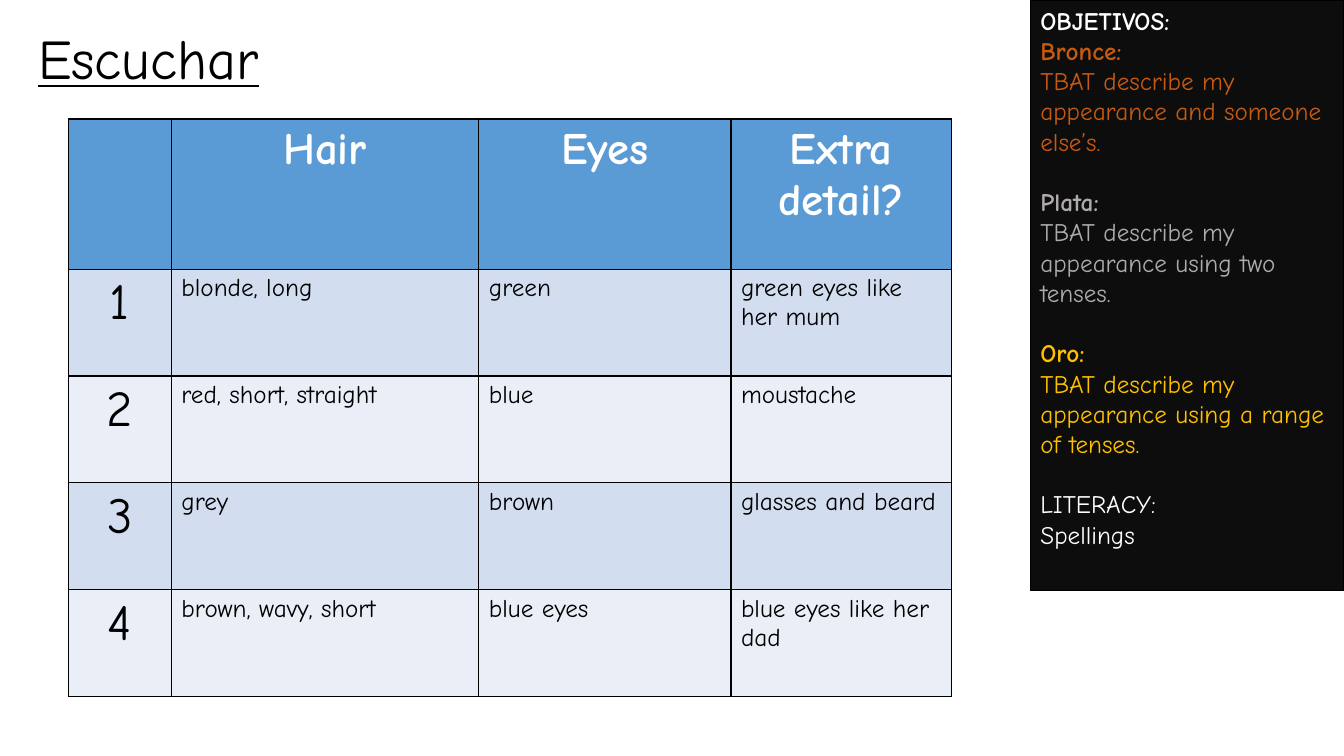
"""Build the Escuchar listening slide with its answer table and objectives panel."""
import pptx
import pptx.dml.color
import pptx.enum.shapes
import pptx.enum.text
import pptx.oxml
import pptx.oxml.ns
import pptx.util
from pptx.util import Inches

RGBColor = pptx.dml.color.RGBColor
BLACK = RGBColor(0x00, 0x00, 0x00)
WHITE = RGBColor(0xFF, 0xFF, 0xFF)
PANEL = RGBColor(0x0D, 0x0D, 0x0D)
BRONZE = RGBColor(0xC5, 0x5A, 0x11)
SILVER = RGBColor(0xAF, 0xAB, 0xAB)
GOLD = RGBColor(0xFF, 0xC0, 0x00)
HEADER = RGBColor(0x5B, 0x9B, 0xD5)
BANDS = [RGBColor(0xEA, 0xEF, 0xF7), RGBColor(0xD2, 0xDE, 0xEF)]
LEFT = pptx.enum.text.PP_ALIGN.LEFT
CENTER = pptx.enum.text.PP_ALIGN.CENTER


def write(paragraph, text, size, color, bold=False, alignment=LEFT):
    paragraph.text = text
    paragraph.alignment = alignment
    paragraph.font.name = "Comic Neue"
    paragraph.font.size = pptx.util.Pt(size)
    paragraph.font.bold = bold
    paragraph.font.color.rgb = color


def add_borders(cell):
    properties = cell._tc.get_or_add_tcPr()
    for position, side in enumerate(("lnL", "lnR", "lnT", "lnB")):
        properties.insert(position, pptx.oxml.parse_xml(
            f'<a:{side} {pptx.oxml.ns.nsdecls("a")} w="12700"><a:solidFill>'
            f'<a:srgbClr val="{BLACK}"/></a:solidFill></a:{side}>'))


presentation = pptx.Presentation()
presentation.slide_width = Inches(13.33)
presentation.slide_height = Inches(7.5)
slide = presentation.slides.add_slide(presentation.slide_layouts[6])

title = slide.shapes.add_textbox(Inches(0.28), Inches(0.18), Inches(2.83), Inches(0.77))
title.text_frame.word_wrap = True
write(title.text_frame.paragraphs[0], "Escuchar", 40, BLACK)
title.text_frame.paragraphs[0].font.underline = True

panel = slide.shapes.add_shape(
    pptx.enum.shapes.MSO_SHAPE.RECTANGLE, Inches(10.22), 0, Inches(3.11), Inches(5.86))
panel.shadow.inherit = False
panel.fill.solid()
panel.fill.fore_color.rgb = PANEL
panel.line.color.rgb = BLACK
panel.line.width = pptx.util.Pt(1)
panel.text_frame.word_wrap = True
panel.text_frame.vertical_anchor = pptx.enum.text.MSO_ANCHOR.TOP

objectives = [
    ("OBJETIVOS:", WHITE, True, 0),
    ("Bronce:", BRONZE, True, 0),
    ("TBAT describe my appearance and someone else’s.", BRONZE, False, 0),
    ("Plata:", SILVER, True, 21.6),
    ("TBAT describe my appearance using two tenses.", SILVER, False, 0),
    ("Oro:", GOLD, True, 21.6),
    ("TBAT describe my appearance using a range of tenses.", GOLD, False, 0),
    ("LITERACY:", WHITE, False, 21.6),
    ("Spellings", WHITE, False, 0),
]
for index, (text, color, bold, gap) in enumerate(objectives):
    frame = panel.text_frame
    paragraph = frame.add_paragraph() if index else frame.paragraphs[0]
    write(paragraph, text, 18, color, bold)
    paragraph.space_before = pptx.util.Pt(gap)

answers = [
    ("", "Hair", "Eyes", "Extra detail?"),
    ("1", "blonde, long", "green", "green eyes like her mum"),
    ("2", "red, short, straight", "blue", "moustache"),
    ("3", "grey", "brown", "glasses and beard"),
    ("4", "brown, wavy, short", "blue eyes", "blue eyes like her dad"),
]
table = slide.shapes.add_table(
    5, 4, Inches(0.68), Inches(1.18), Inches(8.76), Inches(5.73)).table
for column, width in zip(table.columns, (1.02, 3.05, 2.5, 2.19)):
    column.width = Inches(width)
for row_index, values in enumerate(answers):
    table.rows[row_index].height = Inches(1.06 if row_index else 1.49)
    for column_index, value in enumerate(values):
        cell = table.cell(row_index, column_index)
        cell.fill.solid()
        cell.fill.fore_color.rgb = BANDS[row_index % 2] if row_index else HEADER
        add_borders(cell)
        paragraph = cell.text_frame.paragraphs[0]
        if row_index == 0:
            write(paragraph, value, 32, WHITE, True, CENTER)
        elif column_index == 0:
            write(paragraph, value, 36, BLACK, False, CENTER)
        else:
            write(paragraph, value, 18, BLACK)

presentation.save("out.pptx")
